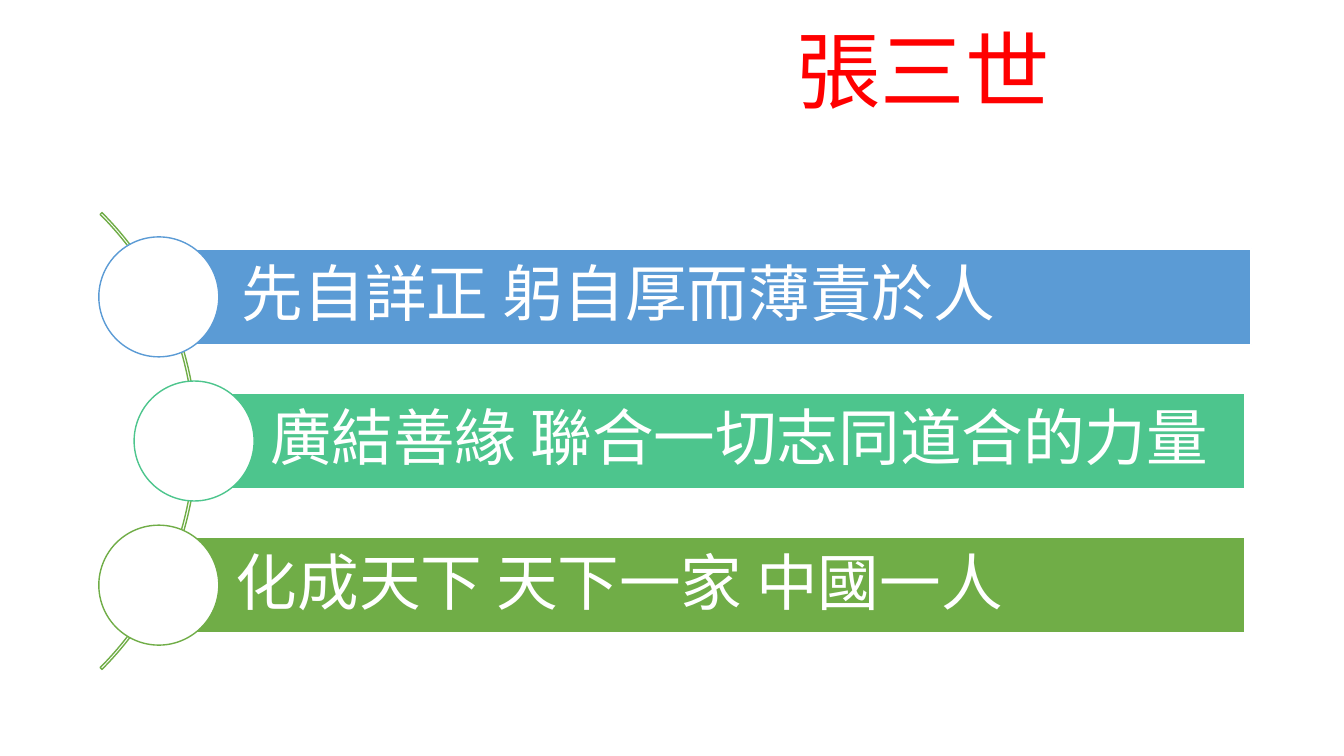
from pptx import Presentation
from pptx.dml.color import RGBColor
from pptx.enum.shapes import MSO_SHAPE as Shape
from pptx.enum.text import MSO_ANCHOR as Anchor
from pptx.oxml.ns import qn
from pptx.util import Inches, Pt

FONT = "Noto Sans CJK SC"


def add_shape(kind, left, top, width, height, line, fill=None):
    shape = page.shapes.add_shape(
        kind, Inches(left), Inches(top), Inches(width), Inches(height))
    shape.shadow.inherit = False
    if fill:
        shape.fill.solid()
        shape.fill.fore_color.rgb = RGBColor.from_string(fill)
    else:
        shape.fill.background()
    shape.line.color.rgb = RGBColor.from_string(line)
    shape.line.width = Pt(1)
    return shape


def write(box, text, size, color, left=0, other=0):
    """Fill the box with one left-aligned, vertically centred line; insets in inches."""
    frame = box.text_frame
    frame.word_wrap = True
    frame.vertical_anchor = Anchor.MIDDLE
    frame.margin_left = Inches(left)
    frame.margin_top = frame.margin_right = frame.margin_bottom = Inches(other)
    para = frame.paragraphs[0]
    para.alignment = 1
    para.line_spacing = 0.9
    span = para.add_run()
    span.text = text
    span.font.name = FONT
    span.font.size = Pt(size)
    span.font.color.rgb = RGBColor.from_string(color)
    east_asian = span.font._element.makeelement(qn("a:ea"), {"typeface": FONT})
    span.font._element.append(east_asian)


deck = Presentation()
deck.slide_width, deck.slide_height = Inches(13.33), Inches(7.5)
page = deck.slides.add_slide(deck.slide_layouts[6])

title = page.shapes.add_textbox(Inches(7.9), Inches(0.2), Inches(4.4), Inches(1.1))
write(title, "張三世", 60.3, "FF0000")

arc = add_shape(Shape.BLOCK_ARC, -4.46, 1.17, 6.41, 6.41, "70AD47")
for index, value in enumerate((189, 27, 0.004)):
    arc.adjustments[index] = value

# Text, colour, bar left, bar width, circle left
steps = [
    ("先自詳正 躬自厚而薄責於人", "5B9BD5", 1.64, 10.77, 0.98),
    ("廣結善緣 聯合一切志同道合的力量", "4DC58D", 1.92, 10.43, 1.33),
    ("化成天下 天下一家 中國一人", "70AD47", 1.58, 10.77, 0.98),
]
for row, (text, color, bar_left, bar_width, circle_left) in enumerate(steps):
    top = 2.47 + 1.43 * row
    bar = add_shape(Shape.RECTANGLE, bar_left, top, bar_width, 0.95, "FFFFFF", color)
    write(bar, text, 44, "FFFFFF", left=0.76, other=0.12)
    add_shape(Shape.OVAL, circle_left, top - 0.12, 1.19, 1.19, color, "FFFFFF")

deck.save("out.pptx")
